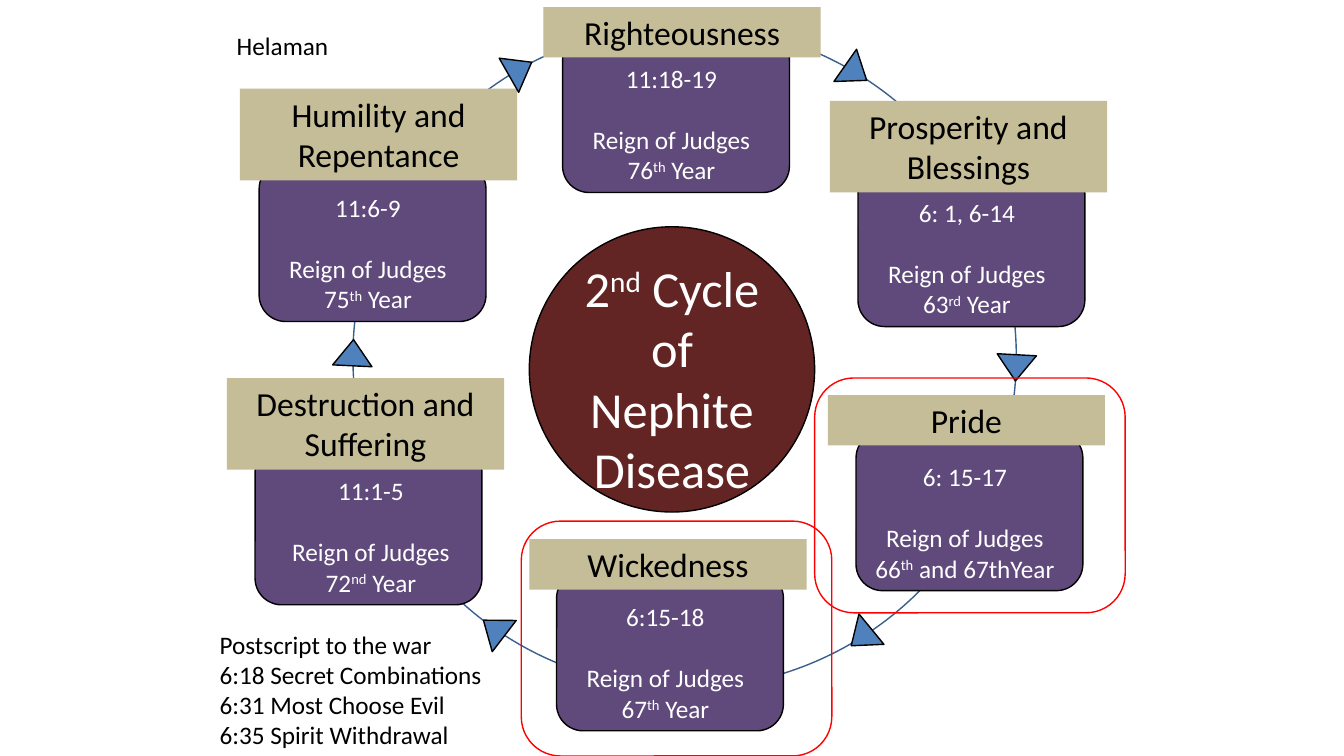
from dataclasses import dataclass
from math import cos, radians, sin

from lxml import etree
from pptx import Presentation
from pptx.dml.color import RGBColor
from pptx.enum import shapes, text
from pptx.util import Inches, Pt


@dataclass(frozen=True)
class Theme:
    font: str = "Calibri"
    body: int = 18
    heading: int = 24
    title: int = 36
    blank_line: int = 22
    black: str = "000000"
    white: str = "FFFFFF"
    card: str = "604A7B"
    heading_fill: str = "C4BD97"
    hub: str = "632523"
    arrow: str = "4F81BD"
    ring: str = "3A5F8C"
    highlight: str = "FF0000"


THEME = Theme()
KIND = shapes.MSO_SHAPE

RING = (3.5, 0.25, 6.58, 6.58)
HUB = (5.25, 2.25, 2.83, 2.83)
CARD_SIZE = (2.25, 1.58)
HEADING_WIDTH = 2.75
ARROW_SIZE = (0.39, 0.26)

STAGES = [
    ("Righteousness", (5.39, 0.07, 0.5), (5.58, 0.33), 2, "11:18-19", "76^th^ Year"),
    ("Prosperity and Blessings", (8.23, 1, 0.91), (8.51, 1.66), 2, "6: 1, 6-14", "63^rd^ Year"),
    ("Pride", (8.21, 3.92, 0.5), (8.49, 4.28), 2, "6: 15-17", "66^th^ and 67thYear"),
    ("Wickedness", (5.25, 5.35, 0.5), (5.52, 5.67), 2, "6:15-18", "67^th^ Year"),
    ("Destruction and Suffering", (2.25, 3.75, 0.91), (2.53, 4.42), 2.14, "11:1-5", "72^nd^ Year"),
    ("Humility and Repentance", (2.38, 0.88, 0.91), (2.57, 1.61), 2, "11:6-9", "75^th^ Year"),
]
ARROW_ANGLES = [
    (31.1, 125), (91.9, 183.1), (147.8, 230.6),
    (215.1, 307.5), (270.7, 2.7), (330.3, 60.3),
]
HIGHLIGHTS = [(8.08, 3.75, 3.08, 2.33), (5.17, 5.17, 3.08, 2.33)]
POSTSCRIPT = [
    "Postscript to the war",
    "6:18 Secret Combinations",
    "6:31 Most Choose Evil",
    "6:35 Spirit Withdrawal",
]


def add_outline(slide, kind, box, fill=None, line=None):
    outline = slide.shapes.add_shape(kind, *map(Inches, box))
    outline.shadow.inherit = False
    if fill:
        outline.fill.solid()
        outline.fill.fore_color.rgb = RGBColor.from_string(fill)
    else:
        outline.fill.background()
    if line:
        outline.line.color.rgb = RGBColor.from_string(line)
        outline.line.width = Pt(1)
    else:
        outline.line.fill.background()
    return outline


def write_text(holder, lines, size=THEME.body, color=THEME.black, centered=False, gap_before=None):
    frame = holder.text_frame
    frame.word_wrap = True
    frame.vertical_anchor = text.MSO_ANCHOR.TOP
    for index, line in enumerate(lines):
        paragraph = frame.paragraphs[0] if index == 0 else frame.add_paragraph()
        paragraph.alignment = text.PP_ALIGN.CENTER if centered else text.PP_ALIGN.LEFT
        if index == gap_before:
            paragraph.space_before = Pt(THEME.blank_line)
        for part, words in enumerate(line.split("^")):
            run = paragraph.add_run()
            run.text = words
            run.font.name = THEME.font
            run.font.size = Pt(size)
            run.font.color.rgb = RGBColor.from_string(color)
            if part % 2:
                run.font._element.set("baseline", "30000")


def add_text(slide, box, lines, **style):
    write_text(slide.shapes.add_textbox(*map(Inches, box)), lines, **style)


def add_stage(slide, name, heading_box, card_corner, verse_width, verses, year):
    left, top = card_corner
    add_outline(slide, KIND.ROUNDED_RECTANGLE, (left, top, *CARD_SIZE), THEME.card, THEME.black)
    add_text(slide, (left + 0.08, top + 0.25, verse_width, 1.31),
             [verses, "Reign of Judges", year],
             color=THEME.white, centered=True, gap_before=1)
    heading_left, heading_top, height = heading_box
    heading = add_outline(slide, KIND.RECTANGLE,
                          (heading_left, heading_top, HEADING_WIDTH, height), THEME.heading_fill)
    write_text(heading, [name], size=THEME.heading, centered=True)


def add_hub(slide, box):
    left, top, width, height = box
    add_outline(slide, KIND.OVAL, box, THEME.hub, THEME.black)
    add_text(slide, (left + 0.33, top + 0.25, width - 0.66, height - 0.31),
             ["2^nd^ Cycle of Nephite Disease"],
             size=THEME.title, color=THEME.white, centered=True)


def add_arrows(slide, ring):
    left, top, diameter, _ = ring
    radius = diameter / 2
    width, height = ARROW_SIZE
    for angle, rotation in ARROW_ANGLES:
        x = left + radius + radius * sin(radians(angle))
        y = top + radius - radius * cos(radians(angle))
        arrow = add_outline(slide, KIND.ISOSCELES_TRIANGLE,
                            (x - width / 2, y - height / 2, width, height),
                            THEME.arrow, THEME.black)
        arrow.rotation = rotation


def main():
    deck = Presentation()
    deck.slide_width, deck.slide_height = Inches(13.33), Inches(7.5)
    slide = deck.slides.add_slide(deck.slide_layouts[6])
    add_outline(slide, KIND.OVAL, RING, line=THEME.ring)
    for stage in STAGES:
        add_stage(slide, *stage)
    add_hub(slide, HUB)
    add_arrows(slide, RING)
    add_text(slide, (2.25, 0.25, 1.67, 0.4), ["Helaman"])
    add_text(slide, (2.08, 6.19, 3.58, 1.31), POSTSCRIPT)
    for box in HIGHLIGHTS:
        add_outline(slide, KIND.ROUNDED_RECTANGLE, box, line=THEME.highlight)
    deck.save("out.pptx")


if __name__ == "__main__":
    main()
